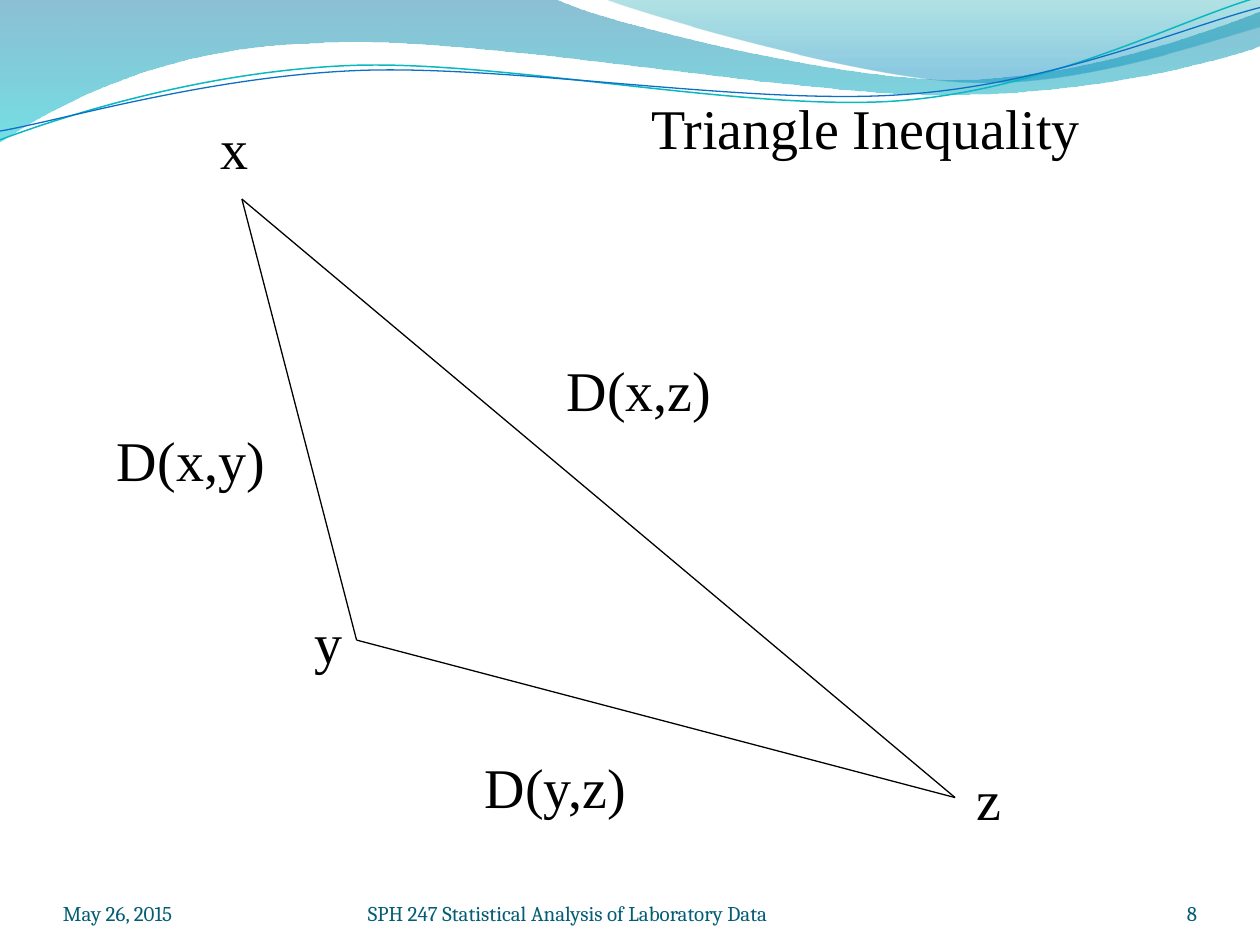
from math import cos, radians, sin

from lxml import etree
from pptx import Presentation
from pptx.dml.color import RGBColor
from pptx.enum.shapes import MSO_CONNECTOR
from pptx.enum.text import MSO_ANCHOR, MSO_AUTO_SIZE, PP_ALIGN
from pptx.oxml.ns import qn
from pptx.util import Inches, Pt

STRAIGHT = MSO_CONNECTOR.STRAIGHT
TOP, BOTTOM = MSO_ANCHOR.TOP, MSO_ANCHOR.BOTTOM
LEFT, RIGHT = PP_ALIGN.LEFT, PP_ALIGN.RIGHT
FIT_SHAPE, NO_FIT = MSO_AUTO_SIZE.SHAPE_TO_FIT_TEXT, MSO_AUTO_SIZE.NONE

THEME = {
    "ink": "000000", "footer": "045D75",
    "body_font": "Times New Roman", "footer_font": "Cambria",
    "body_size": 32, "footer_size": 12, "side_width": 0.75,
    "band": [(0, "0074A1", 45), (1, "00C6CF", 55)],
    "crest": [(0, "00A1A9", 30), (0.8, "008BBF", 45)],
    "teal_line": ("0AB8BF", 0.85), "blue_line": ("0F6FC6", 0.75),
}

TITLE = ("Triangle Inequality", 5.07, 0.69, 3.62)
CORNERS = {"x": (1.92, 1.58), "y": (2.83, 5.08), "z": (7.58, 6.33)}
SIDES = ["xy", "yz", "zx"]
LABELS = [
    ("D(x,z)", 4.4, 2.77, 1.35), ("D(x,y)", 0.83, 3.33, 1.39),
    ("D(y,z)", 3.75, 5.92, 1.35), ("x", 1.65, 0.85, 0.42),
    ("z", 7.65, 6.02, 0.4), ("y", 2.4, 4.77, 0.42),
]
LABEL_HEIGHT = 0.63
FOOTER = [
    ("May 26, 2015", 0.5, 2.33, LEFT),
    ("SPH 247 Statistical Analysis of Laboratory Data", 2.92, 3.67, LEFT),
    ("8", 8.67, 0.83, RIGHT),
]
FOOTER_TOP, FOOTER_HEIGHT = 6.95, 0.4

BAND = [
    [(0, 0)], [(4.4, -0.01)],
    [(4.76, 0.17), (6.64, 0.63), (7.58, 0.63)],
    [(8.53, 0.63), (9.58, 0.26), (10, 0.09)], [(10.01, 0.36)],
    [(9.83, 0.44), (8.7, 0.76), (7.46, 0.75)],
    [(6.22, 0.75), (3.82, 0.28), (2.57, 0.34)],
    [(1.29, 0.36), (0.46, 0.83), (-0.01, 1.13)],
]
CREST = [
    [(4.79, -0.01)],
    [(5.09, 0.11), (6.82, 0.62), (7.69, 0.65)],
    [(8.56, 0.69), (9.61, 0.32), (10, 0.21)], [(10, 0)],
]
TEAL_WAVE = [
    [(0, 1.11)],
    [(0.48, 0.93), (1.58, 0.57), (2.77, 0.52)],
    [(3.95, 0.47), (5.93, 0.89), (7.13, 0.8)],
    [(8.33, 0.71), (9.38, 0.15), (9.98, -0.02)],
]
BLUE_WAVE = [
    [(0, 1.04)],
    [(0.47, 0.96), (1.64, 0.61), (2.83, 0.56)],
    [(4.03, 0.51), (5.97, 0.84), (7.17, 0.75)],
    [(8.36, 0.67), (9.41, 0.21), (10, 0.06)],
]
TEAL_CENTRE, BLUE_CENTRE = (4.99, 0.575), (4.995, 0.59)
WAVE_TILT = 2.7


def color(name):
    return RGBColor.from_string(name)


def turn(point, centre, degrees):
    angle = radians(degrees)
    x, y = point[0] - centre[0], point[1] - centre[1]
    return (centre[0] + x * cos(angle) - y * sin(angle),
            centre[1] + x * sin(angle) + y * cos(angle))


def add_outline(shapes, steps, closed):
    first, *rest = [(Inches(x), Inches(y)) for step in steps for x, y in step]
    builder = shapes.build_freeform(*first)
    builder.add_line_segments(rest, close=closed)
    outline = builder.convert_to_shape()
    outline.shadow.inherit = False
    segments = iter(list(outline.element.iter(qn("a:lnTo"))))
    for step in steps[1:]:
        parts = [next(segments) for _ in step]
        if len(parts) == 3:
            curve = etree.Element(qn("a:cubicBezTo"))
            parts[0].addprevious(curve)
            for part in parts:
                curve.append(part[0])
                part.getparent().remove(part)
    return outline


def add_gradient_area(shapes, steps, stops):
    area = add_outline(shapes, steps, True)
    area.line.fill.background()
    area.fill.gradient()
    area.fill.gradient_angle = 270
    for stop, (position, tint, opacity) in zip(area.fill.gradient_stops, stops):
        stop.position = position
        stop.color.rgb = color(tint)
    tints = area.element.spPr.iter(qn("a:srgbClr"))
    for tint, (_, _, opacity) in zip(tints, stops):
        etree.SubElement(tint, qn("a:alpha"), val=str(opacity * 1000))


def add_wave(shapes, steps, centre, style):
    level = [[turn(point, centre, WAVE_TILT) for point in step] for step in steps]
    wave = add_outline(shapes, level, False)
    wave.rotation = -WAVE_TILT
    wave.fill.background()
    tint, width = style
    wave.line.color.rgb = color(tint)
    wave.line.width = Pt(width)


def place(box, left, top, width, height):
    box.left, box.top = Inches(left), Inches(top)
    box.width, box.height = Inches(width), Inches(height)


def write(box, text, font, size, tint, anchor, align, wrap, fit):
    frame = box.text_frame
    frame.text = text
    frame.word_wrap, frame.auto_size = wrap, fit
    frame.vertical_anchor = anchor
    paragraph = frame.paragraphs[0]
    paragraph.alignment = align
    paragraph.font.name, paragraph.font.size = font, Pt(size)
    paragraph.font.color.rgb = color(tint)


def write_label(box, text, left, top, width):
    place(box, left, top, width, LABEL_HEIGHT)
    write(box, text, THEME["body_font"], THEME["body_size"], THEME["ink"],
          TOP, LEFT, False, FIT_SHAPE)


def add_footer(shapes, text, left, width, align):
    box = shapes.add_textbox(0, 0, 0, 0)
    place(box, left, FOOTER_TOP, width, FOOTER_HEIGHT)
    frame = box.text_frame
    frame.margin_left = frame.margin_right = 0
    frame.margin_top = frame.margin_bottom = 0
    write(box, text, THEME["footer_font"], THEME["footer_size"],
          THEME["footer"], BOTTOM, align, True, NO_FIT)


def add_side(shapes, start, end):
    side = shapes.add_connector(
        STRAIGHT, *(Inches(v) for v in CORNERS[start] + CORNERS[end]))
    side.line.color.rgb = color(THEME["ink"])
    side.line.width = Pt(THEME["side_width"])
    etree.SubElement(side.element.spPr, qn("a:effectLst"))


def main():
    deck = Presentation()
    deck.slide_width, deck.slide_height = Inches(10), Inches(7.5)
    shapes = deck.slides.add_slide(deck.slide_layouts[5]).shapes

    add_gradient_area(shapes, BAND, THEME["band"])
    add_gradient_area(shapes, CREST, THEME["crest"])
    waves = shapes.add_group_shape().shapes
    add_wave(waves, TEAL_WAVE, TEAL_CENTRE, THEME["teal_line"])
    add_wave(waves, BLUE_WAVE, BLUE_CENTRE, THEME["blue_line"])
    for item in FOOTER:
        add_footer(shapes, *item)
    for start, end in SIDES:
        add_side(shapes, start, end)
    for label in LABELS:
        write_label(shapes.add_textbox(0, 0, 0, 0), *label)
    write_label(shapes.title, *TITLE)

    deck.save("out.pptx")


if __name__ == "__main__":
    main()
